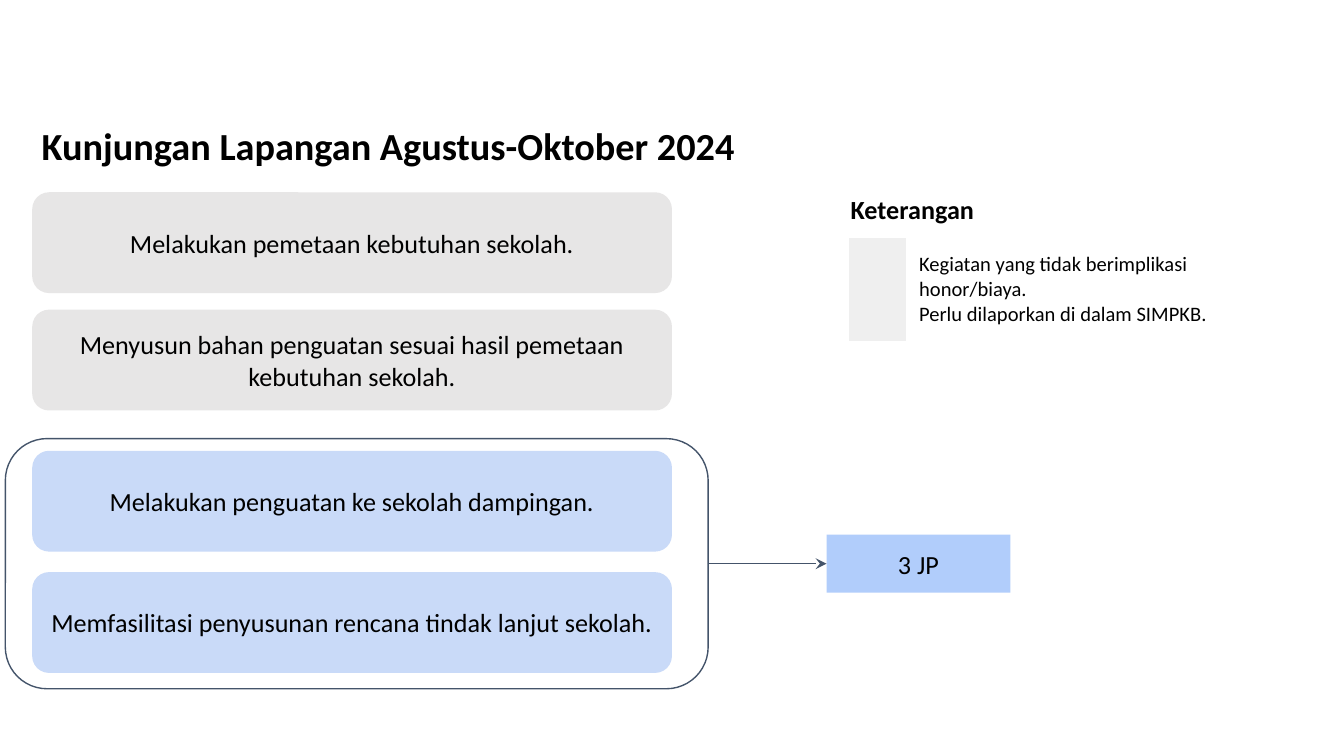
from dataclasses import dataclass

from lxml.etree import SubElement
from pptx import Presentation
from pptx.dml.color import RGBColor
from pptx.enum.shapes import MSO_CONNECTOR, MSO_SHAPE
from pptx.enum.text import MSO_ANCHOR, PP_ALIGN
from pptx.oxml.ns import qn
from pptx.util import Pt

FONT = "Calibri"
BLACK = "000000"
OUTLINE = "44546A"
GREY = "E7E6E6"
BLUE = "C9DAF8"
NO_STYLE = "{2D5ABB26-0587-4C30-8999-92F81FD0307C}"
INSET = 7.2


@dataclass
class Frame:
    left: float
    top: float
    width: float
    height: float

    def lengths(self):
        return Pt(self.left), Pt(self.top), Pt(self.width), Pt(self.height)


@dataclass
class Activity:
    top: float
    fill: str
    text: str


ACTIVITIES = [
    Activity(103, GREY, "Melakukan pemetaan kebutuhan sekolah."),
    Activity(165.9, GREY, "Menyusun bahan penguatan sesuai hasil pemetaan kebutuhan sekolah."),
    Activity(241.5, BLUE, "Melakukan penguatan ke sekolah dampingan."),
    Activity(306.5, BLUE, "Memfasilitasi penyusunan rencana tindak lanjut sekolah."),
]


def color(code: str) -> RGBColor:
    return RGBColor.from_string(code)


def write(text_frame, text: str, size: float, bold=False, align=PP_ALIGN.LEFT):
    text_frame.text = text
    for para in text_frame.paragraphs:
        para.alignment = align
        for span in para.runs:
            span.font.name = FONT
            span.font.size = Pt(size)
            span.font.bold = bold
            span.font.color.rgb = color(BLACK)


def set_margins(target, horizontal: float, vertical: float):
    target.margin_left = target.margin_right = Pt(horizontal)
    target.margin_top = target.margin_bottom = Pt(vertical)


def add_label(page, frame: Frame, text: str, size: float, horizontal=INSET, vertical=INSET):
    box = page.shapes.add_textbox(*frame.lengths())
    box.text_frame.word_wrap = True
    set_margins(box.text_frame, horizontal, vertical)
    write(box.text_frame, text, size, bold=True)
    return box


def add_box(page, kind, frame: Frame, fill: str, text: str, anchor=MSO_ANCHOR.MIDDLE):
    box = page.shapes.add_shape(kind, *frame.lengths())
    box.shadow.inherit = False
    box.fill.solid()
    box.fill.fore_color.rgb = color(fill)
    box.line.fill.background()
    box.text_frame.word_wrap = True
    box.text_frame.vertical_anchor = anchor
    set_margins(box.text_frame, INSET, INSET)
    write(box.text_frame, text, 14, align=PP_ALIGN.CENTER)
    return box


def add_group_outline(page, frame: Frame):
    outline = page.shapes.add_shape(MSO_SHAPE.ROUNDED_RECTANGLE, *frame.lengths())
    outline.shadow.inherit = False
    outline.fill.background()
    outline.line.color.rgb = color(OUTLINE)
    outline.line.width = Pt(0.75)
    return outline


def add_arrow(page, source, target):
    arrow = page.shapes.add_connector(MSO_CONNECTOR.STRAIGHT, 0, 0, 0, 0)
    arrow.begin_connect(source, 3)
    arrow.end_connect(target, 1)
    arrow.line.color.rgb = color(OUTLINE)
    arrow.line.width = Pt(0.75)
    SubElement(arrow.line._get_or_add_ln(), qn("a:tailEnd"), type="stealth")
    SubElement(arrow._element.spPr, qn("a:effectLst"))


def add_legend(page, frame: Frame, key_width: float, fill: str, text: str):
    table = page.shapes.add_table(1, 2, *frame.lengths()).table
    table.first_row = False
    table.horz_banding = False
    table._tbl.tblPr.find(qn("a:tableStyleId")).text = NO_STYLE
    table.columns[0].width = Pt(key_width)
    table.columns[1].width = Pt(frame.width - key_width)
    key, meaning = table.cell(0, 0), table.cell(0, 1)
    key.fill.solid()
    key.fill.fore_color.rgb = color(fill)
    meaning.fill.background()
    set_margins(meaning, INSET, INSET)
    write(meaning.text_frame, text, 11)


def main():
    deck = Presentation()
    deck.slide_width, deck.slide_height = Pt(720), Pt(405)
    page = deck.slides.add_slide(deck.slide_layouts[6])

    outline = add_group_outline(page, Frame(2.9, 235, 376.5, 134))
    title = add_label(page, Frame(17.3, 65.5, 620.6, 31),
                      "Kunjungan Lapangan Agustus-Oktober 2024", 20.5, 5, 2.9)
    title.text_frame.paragraphs[0].line_spacing = 0.9

    for activity in ACTIVITIES:
        add_box(page, MSO_SHAPE.ROUNDED_RECTANGLE, Frame(17.3, activity.top, 342.7, 54),
                activity.fill, activity.text)

    hours = add_box(page, MSO_SHAPE.RECTANGLE, Frame(442.8, 286.5, 98.6, 31),
                    "B1CDFB", "3 JP", MSO_ANCHOR.TOP)
    add_arrow(page, outline, hours)

    add_label(page, Frame(448.6, 96.5, 203.8, 36.7), "Keterangan", 14)
    add_legend(page, Frame(455, 127.5, 248.4, 55), 30.2, "EFEFEF",
               "Kegiatan yang tidak berimplikasi honor/biaya.\nPerlu dilaporkan di dalam SIMPKB.")

    deck.save("out.pptx")


if __name__ == "__main__":
    main()
